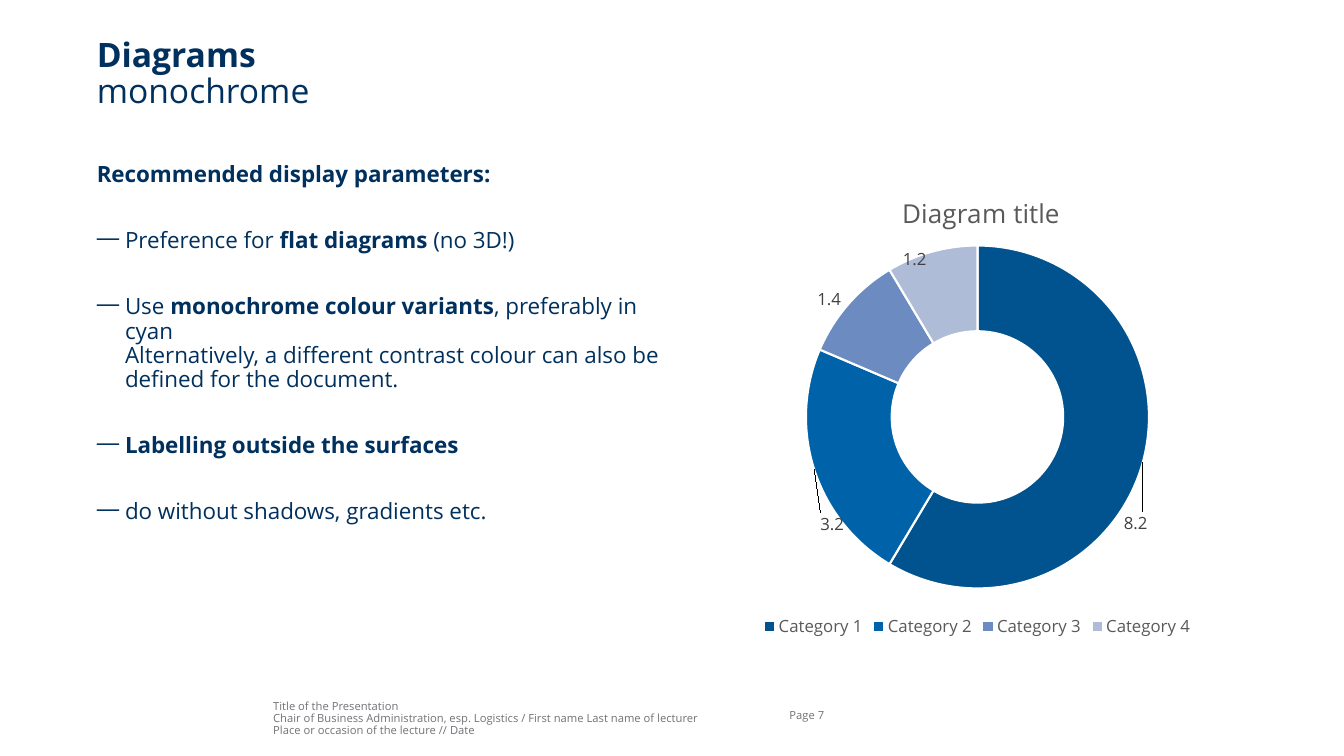
from lxml import etree
from pptx import Presentation, util as u
from pptx.chart.data import CategoryChartData
from pptx.dml.color import RGBColor
from pptx.enum import chart as c, text as t
from pptx.oxml import parse_xml
from pptx.oxml.ns import nsdecls, qn

PX = 9144
FONT = "Open Sans"
COLORS = {
    "navy": "00305D",
    "footer": "727277",
    "chart_text": "595959",
    "label": "404040",
    "white": "FFFFFF",
    "category_1": "00538E",
    "category_2": "0062A9",
    "category_3": "6C8CC1",
    "category_4": "AFBCD8",
}
RECOMMENDATIONS = [
    [("Preference for", False), (" flat diagrams ", True), ("(no 3D!)", False)],
    [
        ("Use ", False),
        ("monochrome colour variants", True),
        (", preferably in cyan\n"
         "Alternatively, a different contrast colour can also be defined for the document.", False),
    ],
    [("Labelling outside the surfaces", True)],
    [("do without shadows, gradients etc.", False)],
]
CATEGORY_VALUES = [8.2, 3.2, 1.4, 1.2]
LABEL_SHIFTS = [(0.06, 0.15), (-0.04, 0.14), (-0.09, -0.07), (-0.05, -0.07)]


def box(*lengths):
    return [u.Emu(length * PX) for length in lengths]


def rgb(name):
    return RGBColor.from_string(COLORS[name])


def format_font(font, size, color, bold=False):
    font.name = FONT
    font.size = u.Pt(size)
    font.bold = bold
    font.color.rgb = rgb(color)


def add_bullet(paragraph):
    properties = paragraph._p.get_or_add_pPr()
    properties.set("marL", str(28 * PX))
    properties.set("indent", str(-28 * PX))
    etree.SubElement(properties, qn("a:buChar")).set("char", "—")


def write_text(frame, paragraphs, size, color, anchor=t.MSO_ANCHOR.TOP, gap=0, bulleted=False):
    frame.word_wrap = True
    frame.auto_size = t.MSO_AUTO_SIZE.NONE
    frame.vertical_anchor = anchor
    frame.margin_left = frame.margin_right = frame.margin_top = frame.margin_bottom = 0
    for index, runs in enumerate(paragraphs):
        paragraph = frame.add_paragraph() if index else frame.paragraphs[0]
        if bulleted and index:
            add_bullet(paragraph)
        paragraph.alignment = t.PP_ALIGN.LEFT
        paragraph.line_spacing = 0.9
        paragraph.space_before = u.Pt(gap if index else 0)
        for words, bold in runs:
            for line_index, line in enumerate(words.split("\n")):
                if line_index:
                    paragraph.add_line_break()
                if line:
                    run = paragraph.add_run()
                    run.text = line
                    format_font(run.font, size, color, bold)


def add_text(slide, place, paragraphs, **text_format):
    shape = slide.shapes.add_textbox(*box(*place))
    write_text(shape.text_frame, paragraphs, **text_format)


def add_title(slide, place, runs):
    title = slide.shapes.title
    title.left, title.top, title.width, title.height = box(*place)
    write_text(title.text_frame, [runs], size=24, color="navy")


def manual_layout(x, y, width=None, height=None, inner=False, edge=True):
    parts = [("layoutTarget", "inner")] if inner else []
    if edge:
        parts += [("xMode", "edge"), ("yMode", "edge")]
    parts += [("x", x), ("y", y)]
    if width:
        parts += [("w", width), ("h", height)]
    children = "".join(f'<c:{tag} val="{value}"/>' for tag, value in parts)
    return parse_xml(f'<c:layout {nsdecls("c")}><c:manualLayout>{children}</c:manualLayout></c:layout>')


def set_layout(parent, layout, after=None):
    for old in parent.findall(qn("c:layout")):
        parent.remove(old)
    previous = parent.find(qn(after)) if after else None
    if previous is None:
        parent.insert(0, layout)
    else:
        previous.addnext(layout)


def add_doughnut(slide, place):
    data = CategoryChartData()
    data.categories = [f"Category {number}" for number in range(1, 5)]
    data.add_series("Series 1", CATEGORY_VALUES)
    chart = slide.shapes.add_chart(c.XL_CHART_TYPE.DOUGHNUT, *box(*place), data).chart
    format_font(chart.font, 10, "chart_text")

    chart.has_title = True
    title_run = chart.chart_title.text_frame.paragraphs[0].add_run()
    title_run.text = "Diagram title"
    format_font(title_run.font, 18.6, "chart_text")
    set_layout(chart.chart_title._element, manual_layout(0.36, 0.05), after="c:tx")

    chart.has_legend = True
    chart.legend.position = c.XL_LEGEND_POSITION.BOTTOM
    chart.legend.include_in_layout = False
    format_font(chart.legend.font, 12, "chart_text")

    plot = chart.plots[0]
    plot.vary_by_categories = True
    plot._element.find(qn("c:holeSize")).set("val", "75")
    set_layout(plot._element.getparent(), manual_layout(0.2, 0.17, 0.6, 0.72, inner=True))
    series = plot.series[0]
    series.data_labels.show_value = True
    format_font(series.data_labels.font, 12, "label")
    for index, shift in enumerate(LABEL_SHIFTS):
        point = series.points[index]
        point.format.fill.solid()
        point.format.fill.fore_color.rgb = rgb(f"category_{index + 1}")
        point.format.line.color.rgb = rgb("white")
        point.format.line.width = u.Pt(1.5)
        format_font(point.data_label.font, 12, "label")
    for label, shift in zip(series._element.iter(qn("c:dLbl")), LABEL_SHIFTS):
        set_layout(label, manual_layout(*shift, edge=False), after="c:idx")


def main():
    presentation = Presentation()
    presentation.slide_width, presentation.slide_height = box(1333, 750)
    slide = presentation.slides.add_slide(presentation.slide_layouts[5])
    add_title(slide, (96, 38, 1157, 75), [("Diagrams \n", True), ("monochrome", False)])
    heading = [("Recommended display parameters:", True)]
    add_text(slide, (96, 162, 568, 475), [heading, *RECOMMENDATIONS],
             size=16, color="navy", gap=30, bulleted=True)
    add_doughnut(slide, (686, 162, 567, 475))
    footer = [
        [("Title of the Presentation", False)],
        [("Chair of Business Administration, esp. Logistics / First name Last name of lecturer \n"
          "Place or occasion of the lecture // Date", False)],
    ]
    add_text(slide, (271, 691, 490, 40), footer,
             size=8, color="footer", anchor=t.MSO_ANCHOR.BOTTOM)
    add_text(slide, (783, 690, 77, 40), [[("Page 7", False)]],
             size=8, color="footer", anchor=t.MSO_ANCHOR.MIDDLE)
    presentation.save("out.pptx")


if __name__ == "__main__":
    main()
